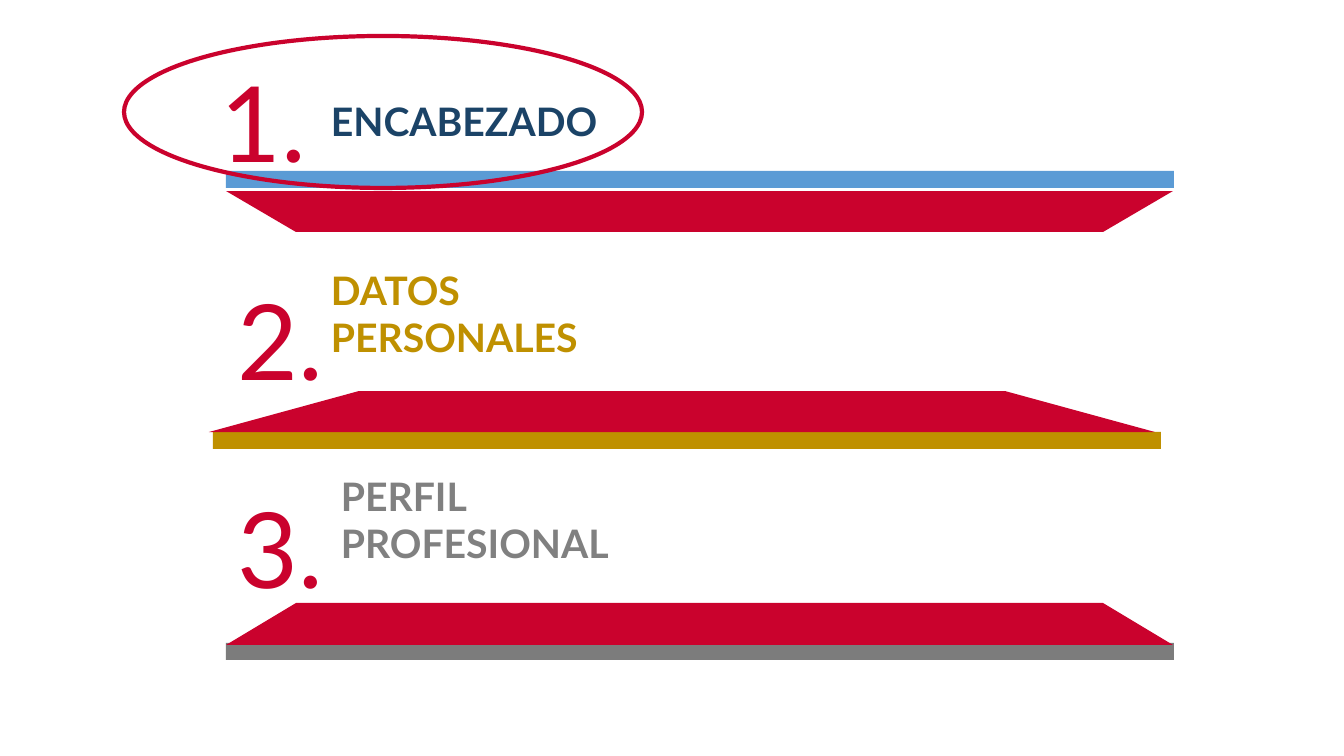
from pptx import Presentation
from pptx import util as u
from pptx.dml.color import RGBColor
from pptx.enum import shapes, text

PX = 914400 / 100.8
RED = RGBColor(0xCA, 0x02, 0x2D)
BLUE = RGBColor(0x5B, 0x9B, 0xD5)
NAVY = RGBColor(0x1B, 0x43, 0x67)
GOLD = RGBColor(0xBF, 0x90, 0x00)
BAR_GRAY = RGBColor(0x7C, 0x7C, 0x7C)
TEXT_GRAY = RGBColor(0x80, 0x80, 0x80)


def emu(*lengths):
    """Turn px lengths into EMU."""
    return [u.Emu(round(n * PX)) for n in lengths]


def paint(sp, color):
    """Give a shape a flat fill without line or shadow."""
    sp.shadow.inherit = False
    sp.fill.solid()
    sp.fill.fore_color.rgb = color
    sp.line.fill.background()


def add_bar(s, x, y, color):
    """Add the thin coloured edge of a shelf."""
    sp = s.shapes.add_shape(shapes.MSO_SHAPE.RECTANGLE, *emu(x, y, 948, 17))
    paint(sp, color)


def add_shelf(s, top, bottom):
    """Add a red trapezoid between two (left, right, y) edges."""
    (x1, x2, y1), (x3, x4, y2) = top, bottom
    outline = s.shapes.build_freeform(x1, y1, scale=PX)
    outline.add_line_segments([(x2, y1), (x4, y2), (x3, y2)], close=True)
    paint(outline.convert_to_shape(), RED)


def add_text(s, words, box, *, size, color, bold=False, wrap=True,
             align=text.PP_ALIGN.LEFT, anchor=text.MSO_ANCHOR.BOTTOM):
    """Add a one-paragraph text box."""
    tf = s.shapes.add_textbox(*emu(*box)).text_frame
    tf.word_wrap = wrap
    tf.vertical_anchor = anchor
    p = tf.paragraphs[0]
    p.alignment = align
    r = p.add_run()
    r.text = words
    r.font.name = "Lato"
    r.font.size = u.Pt(size)
    r.font.bold = bold
    r.font.color.rgb = color


def add_ring(s, box):
    """Add the red ellipse that highlights a section."""
    sp = s.shapes.add_shape(shapes.MSO_SHAPE.OVAL, *emu(*box))
    sp.shadow.inherit = False
    sp.fill.background()
    sp.line.color.rgb = RED
    sp.line.width = u.Pt(3)


def main():
    """Build the slide with the three sections."""
    prs = Presentation()
    prs.slide_width, prs.slide_height = emu(1344, 756)
    s = prs.slides.add_slide(prs.slide_layouts[6])

    shelves = [
        (226, 171, BLUE, (226, 1173, 191), (296, 1103, 232)),
        (213, 432, GOLD, (359, 1005, 391), (209, 1155, 432)),
        (226, 643, BAR_GRAY, (296, 1103, 603), (226, 1173, 645)),
    ]
    for x, y, color, top, bottom in shelves:
        add_bar(s, x, y, color)
        add_shelf(s, top, bottom)

    sections = [
        ("ENCABEZADO", NAVY, (209, 52), (321, 92, 321, 57)),
        ("DATOS PERSONALES", GOLD, (226, 270), (321, 308, 366, 57)),
        ("PERFIL PROFESIONAL", TEXT_GRAY, (226, 478), (331, 514, 384, 57)),
    ]
    for number, (label, color, corner, box) in enumerate(sections, 1):
        add_text(s, f"{number}.", (*corner, 109, 137), size=75, color=RED,
                 wrap=False, align=text.PP_ALIGN.CENTER,
                 anchor=text.MSO_ANCHOR.MIDDLE)
        add_text(s, label, box, size=28, color=color, bold=True)

    add_ring(s, (124, 36, 518, 152))
    prs.save("out.pptx")


if __name__ == "__main__":
    main()
